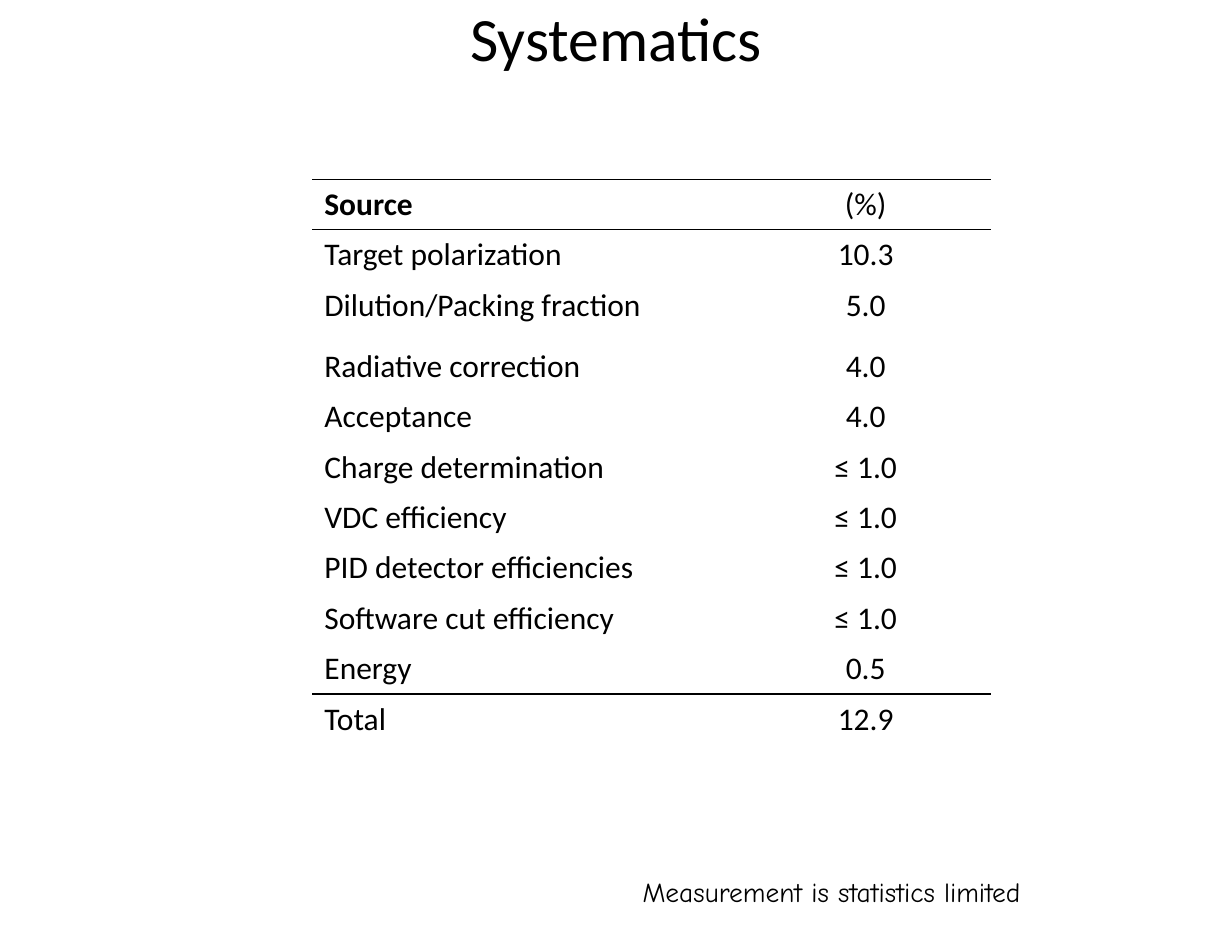
from dataclasses import dataclass

from lxml.etree import SubElement
from pptx import Presentation
from pptx.dml.color import RGBColor
from pptx.enum.text import MSO_ANCHOR, PP_ALIGN
from pptx.oxml.ns import qn
from pptx.util import Cm, Pt

BLACK = "000000"
BODY_FONT = "Calibri"
NOTE_FONT = "Comic Neue"
ROW_HEIGHT = 1.3
TALL_ROW_HEIGHT = 1.57
COLUMN_WIDTHS = (11.02, 6.48)


@dataclass
class Uncertainty:
    source: str
    percent: str
    rule_above: bool = False
    rule_below: bool = False
    bold: bool = False
    height: float = ROW_HEIGHT


UNCERTAINTIES = [
    Uncertainty("Source", "(%)", rule_above=True, rule_below=True, bold=True),
    Uncertainty("Target polarization", "10.3", rule_above=True),
    Uncertainty("Dilution/Packing fraction", "5.0", height=TALL_ROW_HEIGHT),
    Uncertainty("Radiative correction", "4.0"),
    Uncertainty("Acceptance", "4.0"),
    Uncertainty("Charge determination", "≤ 1.0"),
    Uncertainty("VDC efficiency", "≤ 1.0"),
    Uncertainty("PID detector efficiencies", "≤ 1.0"),
    Uncertainty("Software cut efficiency", "≤ 1.0"),
    Uncertainty("Energy", "0.5", rule_below=True),
    Uncertainty("Total", "12.9", rule_above=True),
]


def color(hex_value: str) -> RGBColor:
    return RGBColor.from_string(hex_value)


def write(frame, text: str, size: float, font_name: str,
          align=PP_ALIGN.LEFT, bold: bool = False) -> None:
    frame.text = text
    paragraph = frame.paragraphs[0]
    paragraph.alignment = align
    font = paragraph.runs[0].font
    font.size = Pt(size)
    font.name = font_name
    font.bold = bold
    font.color.rgb = color(hex_value=BLACK)


def set_borders(cell, above: bool, below: bool) -> None:
    """Draw the horizontal rules asked for and hide the other borders."""
    properties = cell._tc.get_or_add_tcPr()
    sides = {"lnL": False, "lnR": False, "lnT": above, "lnB": below}
    for position, (side, visible) in enumerate(sides.items()):
        line = SubElement(properties, qn(f"a:{side}"), w=str(Pt(1)))
        if visible:
            fill = SubElement(line, qn("a:solidFill"))
            SubElement(fill, qn("a:srgbClr"), val=BLACK)
        else:
            SubElement(line, qn("a:noFill"))
        properties.insert(position, line)


def add_title(slide) -> None:
    frame = slide.shapes.add_textbox(Cm(1.59), Cm(0.2), Cm(28.57), Cm(1.52)).text_frame
    frame.word_wrap = True
    frame.vertical_anchor = MSO_ANCHOR.MIDDLE
    frame.margin_left = frame.margin_right = Cm(0.33)
    frame.margin_top = frame.margin_bottom = Cm(0.16)
    write(frame, "Systematics", 45, BODY_FONT, PP_ALIGN.CENTER)


def add_uncertainty_table(slide) -> None:
    total_height = sum(row.height for row in UNCERTAINTIES)
    table = slide.shapes.add_table(
        len(UNCERTAINTIES), len(COLUMN_WIDTHS), Cm(8.05), Cm(4.62),
        Cm(sum(COLUMN_WIDTHS)), Cm(total_height)).table
    table.first_row = table.horz_banding = False
    for column, width in zip(table.columns, COLUMN_WIDTHS):
        column.width = Cm(width)
    for row, entry in zip(table.rows, UNCERTAINTIES):
        row.height = Cm(entry.height)
        source, percent = row.cells
        for cell in (source, percent):
            cell.fill.background()
            cell.margin_left = cell.margin_right = Cm(0.31)
            cell.margin_top = cell.margin_bottom = Cm(0.16)
            set_borders(cell, entry.rule_above, entry.rule_below)
        write(source.text_frame, entry.source, 23, BODY_FONT, bold=entry.bold)
        write(percent.text_frame, entry.percent, 23, BODY_FONT, PP_ALIGN.CENTER)


def add_conclusion(slide) -> None:
    frame = slide.shapes.add_textbox(Cm(16.31), Cm(22.43), Cm(11), Cm(1.12)).text_frame
    frame.word_wrap = False
    write(frame, "Measurement is statistics limited", 20, NOTE_FONT)


def main() -> None:
    deck = Presentation()
    deck.slide_width, deck.slide_height = Cm(31.75), Cm(24.13)
    slide = deck.slides.add_slide(deck.slide_layouts[6])
    add_title(slide)
    add_uncertainty_table(slide)
    add_conclusion(slide)
    deck.save("out.pptx")


if __name__ == "__main__":
    main()
